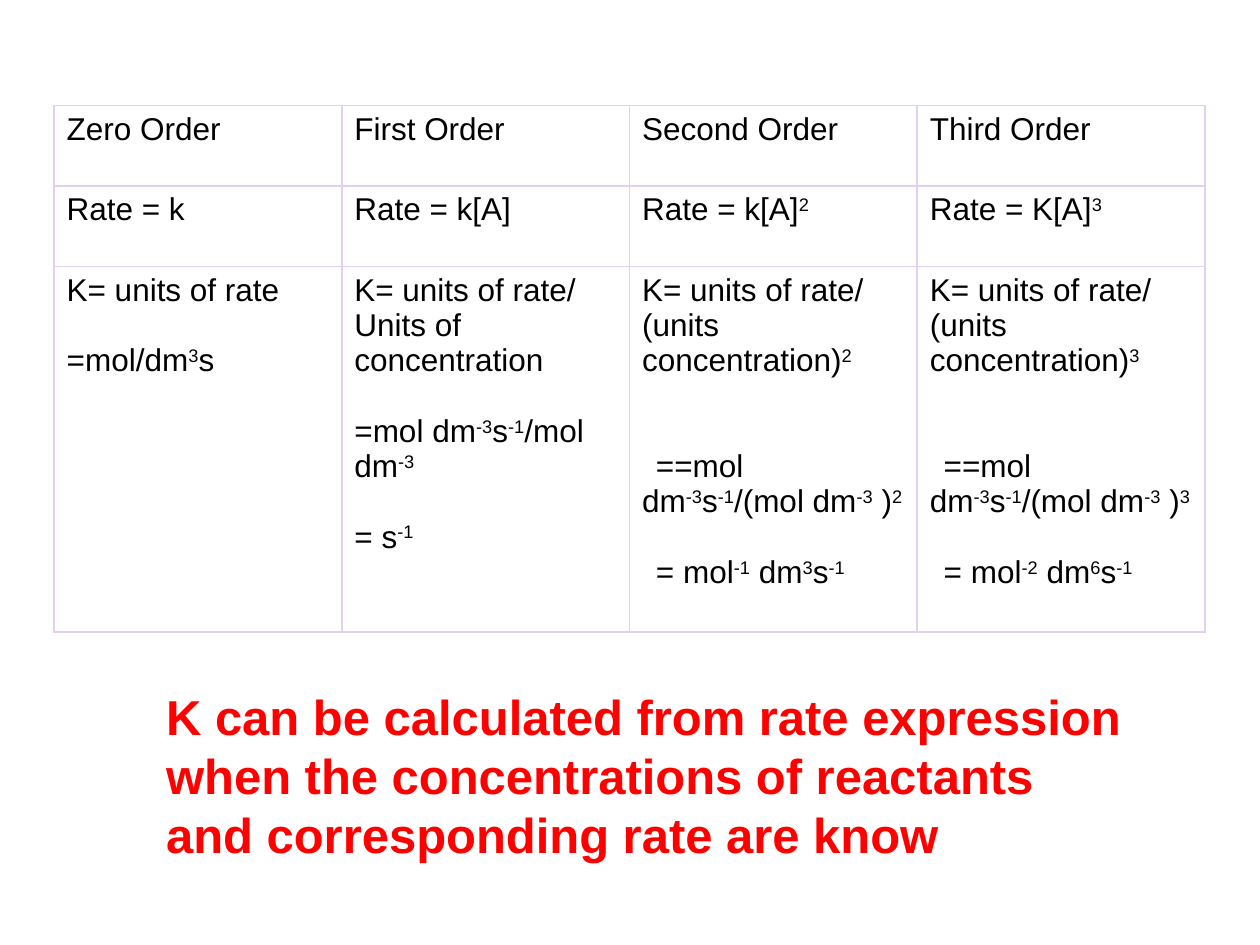
import dataclasses

import lxml.etree
import pptx
import pptx.dml.color
import pptx.oxml.ns
import pptx.util
from pptx.util import Cm, Pt


@dataclasses.dataclass(frozen=True)
class Theme:
    font: str = "Arial"
    ink: str = "000000"
    accent: str = "FF0000"
    paper: str = "FFFFFF"
    border: str = "E3D0F1"
    table_size: int = 18
    note_size: int = 28


theme = Theme()
color = pptx.dml.color.RGBColor.from_string
qn = pptx.oxml.ns.qn


def add_spans(para, text, size, ink, bold=False):
    """Add text run by run; parts between a pair of ^ marks are superscript."""
    for index, part in enumerate(text.split("^")):
        if not part:
            continue
        span = para.add_run()
        span.text = part
        span.font.name = theme.font
        span.font.size = Pt(size)
        span.font.bold = bold
        span.font.color.rgb = color(ink)
        if index % 2:
            span._r.get_or_add_rPr().set("baseline", "30000")


def add_borders(cell):
    properties = cell._tc.get_or_add_tcPr()
    for side in ("lnL", "lnR", "lnT", "lnB"):
        line = lxml.etree.SubElement(properties, qn(f"a:{side}"), w=str(Pt(1)))
        fill = lxml.etree.SubElement(line, qn("a:solidFill"))
        lxml.etree.SubElement(fill, qn("a:srgbClr"), val=theme.border)


deck = pptx.Presentation()
deck.slide_width, deck.slide_height = Cm(25.4), Cm(19.05)
page = deck.slides.add_slide(deck.slide_layouts[6])

# Each cell is a list of paragraphs: (text, empty lines above, first-line indent in cm)
orders = ["Zero Order", "First Order", "Second Order", "Third Order"]
rates = ["Rate = k", "Rate = k[A]", "Rate = k[A]^2^", "Rate = K[A]^3^"]
units = [
    [("K= units of rate", 0, 0), ("=mol/dm^3^s", 1, 0)],
    [
        ("K= units of rate/", 0, 0),
        ("Units of concentration", 0, 0),
        ("=mol dm^-3^s^-1^/mol dm^-3^", 1, 0),
        ("= s^-1^", 1, 0),
    ],
]
for power, mol, dm in ((2, -1, 3), (3, -2, 6)):
    units.append([
        ("K= units of rate/", 0, 0),
        (f"(units concentration)^{power}^", 0, 0),
        (f"==mol dm^-3^s^-1^/(mol dm^-3^ )^{power}^", 2, 0.28),
        (f"= mol^{mol}^ dm^{dm}^s^-1^", 1, 0.28),
    ])
rows = [[[(text, 0, 0)] for text in texts] for texts in (orders, rates)] + [units]

row_heights = [1.62, 1.62, 7.37]
column_width = 5.8
table = page.shapes.add_table(
    len(rows), len(orders), Cm(1.09), Cm(2.13),
    Cm(column_width * len(orders)), Cm(sum(row_heights)),
).table
table.first_row = False
table.horz_banding = False
for column in table.columns:
    column.width = Cm(column_width)
for row, height in zip(table.rows, row_heights):
    row.height = Cm(height)

line_height = theme.table_size * 1.12
for row, contents in zip(table.rows, rows):
    for cell, paragraphs in zip(row.cells, contents):
        add_borders(cell)
        cell.fill.solid()
        cell.fill.fore_color.rgb = color(theme.paper)
        for index, (text, gap, indent) in enumerate(paragraphs):
            frame = cell.text_frame
            para = frame.add_paragraph() if index else frame.paragraphs[0]
            para.space_before = Pt(round(gap * line_height, 1))
            if indent:
                para._p.get_or_add_pPr().set("indent", str(Cm(indent)))
            add_spans(para, text, theme.table_size, theme.ink)

box = page.shapes.add_textbox(Cm(3.1), Cm(13.72), Cm(20), Cm(3.84))
box.text_frame.word_wrap = True
add_spans(
    box.text_frame.paragraphs[0],
    "K can be calculated from rate expression when the concentrations "
    "of reactants and corresponding rate are know",
    theme.note_size, theme.accent, bold=True,
)

deck.save("out.pptx")
